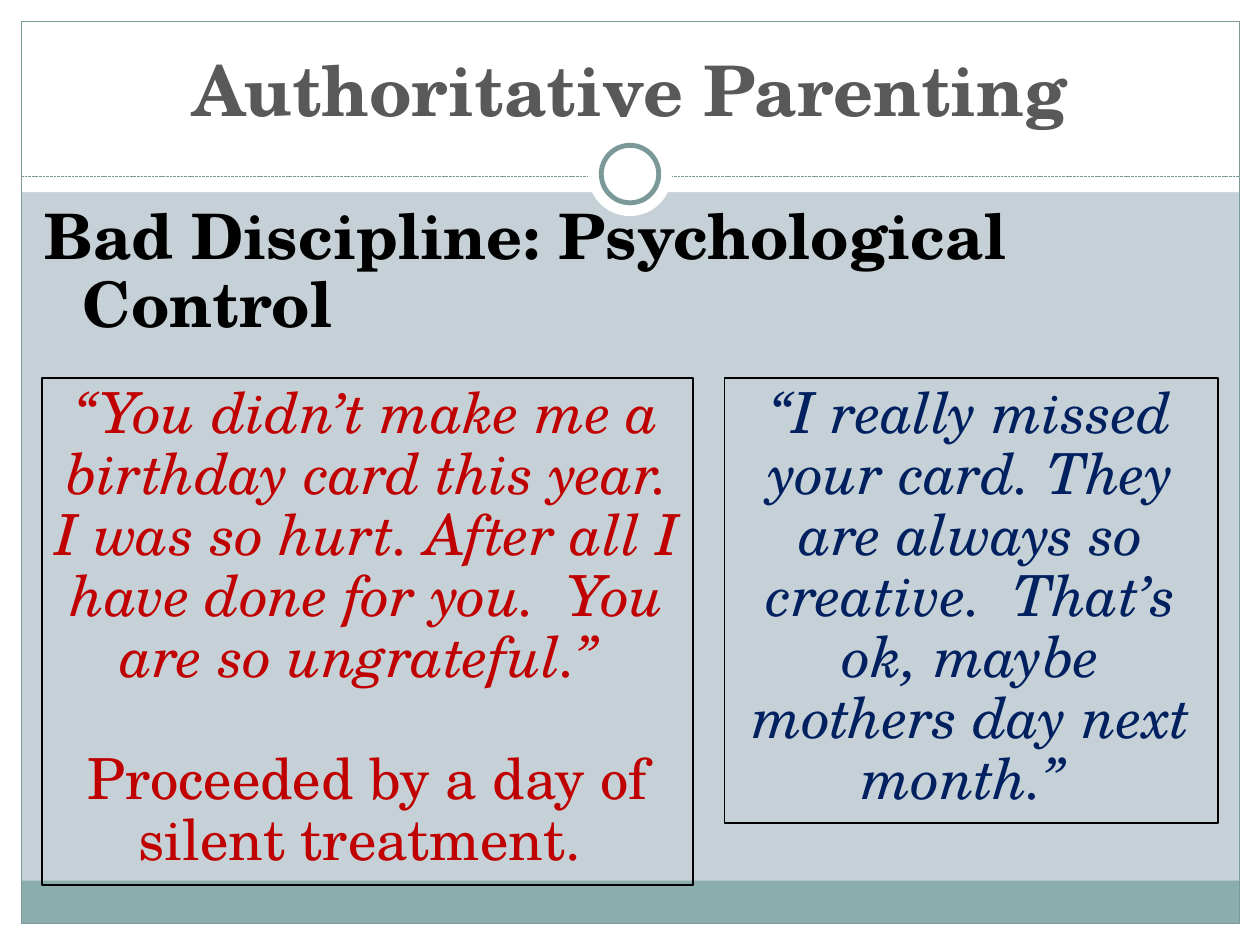
from dataclasses import dataclass

from lxml import etree
from pptx import Presentation
from pptx import util as u
from pptx.dml.color import RGBColor
from pptx.enum import dml, shapes, text
from pptx.oxml.ns import qn


@dataclass(frozen=True)
class Theme:
    """Colours, type sizes and font of the slide."""
    font: str = "TeX Gyre Schola"
    paper: str = "FFFFFF"
    backdrop: str = "C5D1D7"
    footer: str = "8CADAE"
    rule: str = "7C999A"
    heading: str = "595959"
    ink: str = "000000"
    bad: str = "C00000"
    good: str = "002060"
    title_size: float = 56.7
    topic_size: float = 51
    quote_size: float = 46
    tight: float = 0.9


THEME = Theme()
WIDTH, HEIGHT = u.Inches(14.22), u.Inches(10.67)
COLUMNS, ROWS = 60, 45


def place(left, top, width, height):
    """Turn grid columns and rows into slide lengths."""
    col, row = WIDTH / COLUMNS, HEIGHT / ROWS
    return [round(n) for n in (left * col, top * row, width * col, height * row)]


def outline(line, color, width):
    """Give a line its colour and width."""
    line.color.rgb = RGBColor.from_string(color)
    line.width = u.Pt(width)


def add_panel(slide, area, fill=None, line_width=None, kind=shapes.MSO_SHAPE.RECTANGLE):
    """Draw a plain shape with an optional fill and outline."""
    panel = slide.shapes.add_shape(kind, *place(*area))
    panel.shadow.inherit = False
    if fill:
        panel.fill.solid()
        panel.fill.fore_color.rgb = RGBColor.from_string(fill)
    else:
        panel.fill.background()
    if line_width:
        outline(panel.line, THEME.rule, line_width)
    else:
        panel.line.fill.background()


def add_rule(slide, row):
    """Draw the dashed rule across the frame."""
    left, top, width, _ = place(1, row, COLUMNS - 2, 0)
    rule = slide.shapes.add_connector(
        shapes.MSO_CONNECTOR.STRAIGHT, left, top, left + width, top)
    outline(rule.line, THEME.rule, 0.75)
    rule.line.dash_style = dml.MSO_LINE.SQUARE_DOT
    etree.SubElement(rule._element.spPr, qn("a:effectLst"))


def add_frame(slide):
    """Draw the margins, footer band, frame and ring."""
    for area in ((0, ROWS - 1, COLUMNS, 1), (0, 0, COLUMNS, 9.15),
                 (0, 0, 1, ROWS), (COLUMNS - 1, 0, 1, ROWS)):
        add_panel(slide, area, THEME.paper)
    add_panel(slide, (1, 41.93, COLUMNS - 2, 2.03), THEME.footer)
    add_panel(slide, (1, 1, COLUMNS - 2, ROWS - 2), line_width=0.75)
    add_rule(slide, 8.4)
    for diameter, line_width in ((4, None), (2.74, 4)):
        area = (COLUMNS / 2 - diameter / 2, 8.29 - diameter / 2, diameter, diameter)
        add_panel(slide, area, THEME.paper, line_width, shapes.MSO_SHAPE.OVAL)


def set_frame(frame, anchor, auto_size):
    """Set the insets, wrapping and anchor of a text frame."""
    frame.word_wrap = True
    frame.auto_size = auto_size
    frame.vertical_anchor = anchor
    frame.margin_left = frame.margin_right = u.Inches(0.14)
    frame.margin_top = frame.margin_bottom = u.Inches(0.07)


def add_words(paragraph, words, size, color, bold=False, italic=False):
    """Add one formatted run to a paragraph."""
    run = paragraph.add_run()
    run.text = words
    font = run.font
    font.name, font.size = THEME.font, u.Pt(size)
    font.bold, font.italic = bold, italic
    font.color.rgb = RGBColor.from_string(color)


def fill_placeholder(slide, holder, area, anchor):
    """Move a placeholder above the frame and return its paragraph."""
    slide.shapes._spTree.append(holder._element)
    holder.left, holder.top, holder.width, holder.height = place(*area)
    set_frame(holder.text_frame, anchor, text.MSO_AUTO_SIZE.NONE)
    return holder.text_frame.paragraphs[0]


def add_title(slide, words):
    """Write the slide title."""
    heading = fill_placeholder(slide, slide.shapes.title, (2, 1.52, 56, 4.98),
                               text.MSO_ANCHOR.BOTTOM)
    heading.alignment = text.PP_ALIGN.CENTER
    add_words(heading, words, THEME.title_size, THEME.heading, bold=True)


def add_topic(slide, words):
    """Write the topic line with a hanging indent."""
    topic = fill_placeholder(slide, slide.placeholders[1], (1.52, 9.49, 57.5, 7.5),
                             text.MSO_ANCHOR.TOP)
    props = topic._p.get_or_add_pPr()
    props.set("marL", str(u.Inches(0.43)))
    props.set("indent", str(-u.Inches(0.43)))
    etree.SubElement(props, qn("a:buNone"))
    topic.line_spacing = THEME.tight
    topic.space_before = u.Pt(0)
    add_words(topic, words, THEME.topic_size, THEME.ink, bold=True)


def add_quote(slide, area, color, quote, outcome=None):
    """Write a boxed quote, with an optional outcome one line below."""
    box = slide.shapes.add_textbox(*place(*area))
    outline(box.line, THEME.ink, 1.5)
    frame = box.text_frame
    set_frame(frame, text.MSO_ANCHOR.TOP, text.MSO_AUTO_SIZE.SHAPE_TO_FIT_TEXT)
    add_words(frame.paragraphs[0], quote, THEME.quote_size, color, italic=True)
    if outcome:
        result = frame.add_paragraph()
        result.space_before = u.Pt(49.6)
        add_words(result, outcome, THEME.quote_size, color)
    for paragraph in frame.paragraphs:
        paragraph.alignment = text.PP_ALIGN.CENTER
        paragraph.line_spacing = THEME.tight


def main():
    """Build the slide and save it."""
    deck = Presentation()
    deck.slide_width, deck.slide_height = WIDTH, HEIGHT
    slide = deck.slides.add_slide(deck.slide_layouts[1])
    slide.background.fill.solid()
    slide.background.fill.fore_color.rgb = RGBColor.from_string(THEME.backdrop)
    add_frame(slide)
    add_title(slide, "Authoritative Parenting")
    add_topic(slide, "Bad Discipline: Psychological Control")
    add_quote(slide, (34.5, 18, 23.5, 21.2), THEME.good,
              "“I really missed your card. They are always so creative.  "
              "That’s ok, maybe mothers day next month.” ")
    add_quote(slide, (2, 18, 31, 24.13), THEME.bad,
              "“You didn’t make me a birthday card this year. I was so hurt. "
              "After all I have done for you.  You are so ungrateful.” ",
              "Proceeded by a day of silent treatment. ")
    deck.save("out.pptx")


if __name__ == "__main__":
    main()
